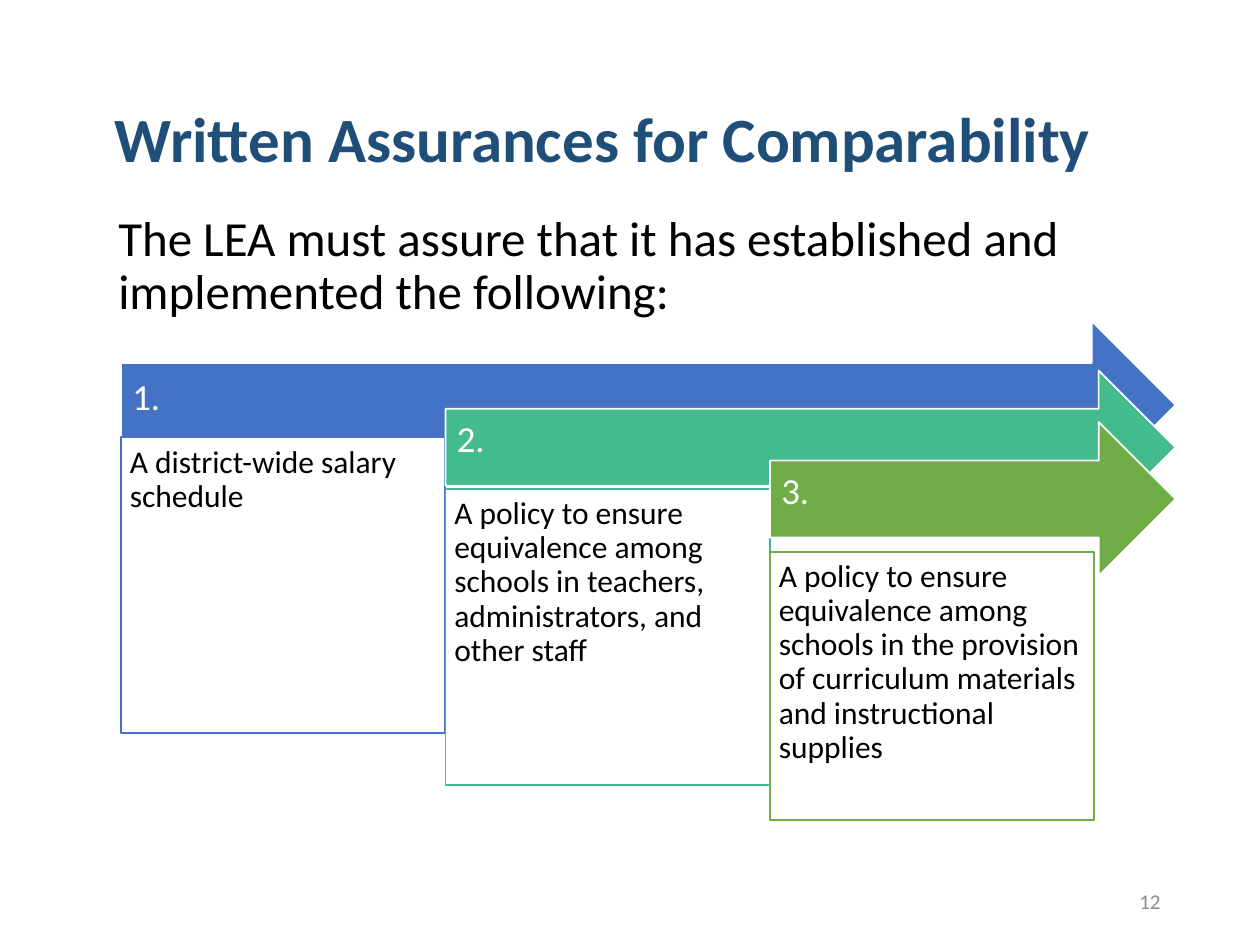
from dataclasses import dataclass

from pptx import Presentation
from pptx.dml.color import RGBColor
from pptx.enum.shapes import MSO_SHAPE
from pptx.enum.text import MSO_ANCHOR, MSO_AUTO_SIZE, PP_ALIGN
from pptx.util import Inches, Pt

ARROW, RECTANGLE = MSO_SHAPE.RIGHT_ARROW, MSO_SHAPE.RECTANGLE
TOP, MIDDLE = MSO_ANCHOR.TOP, MSO_ANCHOR.MIDDLE
LEFT, RIGHT = PP_ALIGN.LEFT, PP_ALIGN.RIGHT
NO_AUTOFIT = MSO_AUTO_SIZE.NONE
TITLE_ONLY = 5
SLIDE_WIDTH, SLIDE_HEIGHT = 10, 7.5
GRID_COLUMNS, GRID_ROWS = 100, 75


@dataclass(frozen=True)
class Theme:
    """Colours, font and type sizes of the slide."""
    font: str = "Calibri"
    title: str = "1F4E79"
    text: str = "000000"
    paper: str = "FFFFFF"
    muted: str = "8C8C8C"
    accents: tuple = ("4472C4", "43BB8D", "70AD47")
    title_size: int = 36
    intro_size: int = 28
    number_size: int = 21
    panel_size: int = 18
    footer_size: int = 12


@dataclass(frozen=True)
class Box:
    """A rectangle in grid columns and rows."""
    left: float
    top: float
    width: float
    height: float

    def emu(self):
        """Return the position and size in slide units."""
        column, row = SLIDE_WIDTH / GRID_COLUMNS, SLIDE_HEIGHT / GRID_ROWS
        return (Inches(self.left * column), Inches(self.top * row),
                Inches(self.width * column), Inches(self.height * row))


@dataclass(frozen=True)
class Step:
    """Wording of one step and its rows within the diagram."""
    text: str
    arrow_top: float
    arrow_height: float
    panel_top: float
    panel_height: float


THEME = Theme()
STEPS = (
    Step("A district-wide salary schedule", 0, 13.3, 9.2, 23.5),
    Step("A policy to ensure equivalence among schools in teachers, "
         "administrators, and other staff", 3.9, 12.2, 13.3, 23.5),
    Step("A policy to ensure equivalence among schools in the provision of "
         "curriculum materials and instructional supplies", 8, 12.2, 18.3, 21.3),
)


def write(shape, text, *, size, color, bold=False, align=LEFT, anchor=TOP,
          spacing=0.9, insets=(0.1, 0.05, 0.1, 0.05)):
    """Put one formatted paragraph into a shape."""
    frame = shape.text_frame
    frame.text = text
    frame.word_wrap = True
    frame.auto_size = NO_AUTOFIT
    frame.vertical_anchor = anchor
    (frame.margin_left, frame.margin_top,
     frame.margin_right, frame.margin_bottom) = map(Inches, insets)
    paragraph = frame.paragraphs[0]
    paragraph.alignment = align
    paragraph.line_spacing = spacing
    paragraph.space_before = Pt(0)
    font = paragraph.runs[0].font
    font.name, font.size, font.bold = THEME.font, Pt(size), bold
    font.color.rgb = RGBColor.from_string(color)


def add_block(slide, kind, box, fill, line):
    """Add a filled preset shape with a thin outline."""
    shape = slide.shapes.add_shape(kind, *box.emu())
    shape.shadow.inherit = False
    shape.fill.solid()
    shape.fill.fore_color.rgb = RGBColor.from_string(fill)
    shape.line.color.rgb = RGBColor.from_string(line)
    shape.line.width = Pt(1)
    return shape


def add_title(slide, box):
    """Place the title placeholder."""
    title = slide.shapes.title
    title.left, title.top, title.width, title.height = box.emu()
    write(title, "Written Assurances for Comparability", size=THEME.title_size,
          color=THEME.title, bold=True, anchor=MIDDLE)


def add_intro(slide, box):
    """Add the sentence that leads into the steps."""
    write(slide.shapes.add_textbox(*box.emu()),
          "The LEA must assure that it has established and implemented the following:",
          size=THEME.intro_size, color=THEME.text)


def add_step(slide, box, number, step, accent, panel_width):
    """Add a numbered arrow across the box and the panel below its start."""
    arrow = add_block(slide, ARROW,
                      Box(box.left, box.top + step.arrow_top, box.width, step.arrow_height),
                      accent, THEME.paper)
    write(arrow, f"{number}.", size=THEME.number_size, color=THEME.paper,
          anchor=MIDDLE, insets=(0.09, 0.09, 0.28, 0.19))
    panel = add_block(slide, RECTANGLE,
                      Box(box.left, box.top + step.panel_top, panel_width, step.panel_height),
                      THEME.paper, accent)
    write(panel, step.text, size=THEME.panel_size, color=THEME.text, insets=(0.07,) * 4)


def add_steps(slide, box):
    """Add the staggered arrows, each starting one panel further right."""
    panel_width = box.width * 4 / 13
    for index, (step, accent) in enumerate(zip(STEPS, THEME.accents)):
        offset = index * panel_width
        step_box = Box(box.left + offset, box.top, box.width - offset, box.height)
        add_step(slide, step_box, index + 1, step, accent, panel_width)


def add_page_number(slide, box):
    """Add the page number at the lower right."""
    write(slide.shapes.add_textbox(*box.emu()), "12", size=THEME.footer_size,
          color=THEME.muted, align=RIGHT, anchor=MIDDLE, spacing=1)


def main():
    """Build and save the slide."""
    presentation = Presentation()
    presentation.slide_width = Inches(SLIDE_WIDTH)
    presentation.slide_height = Inches(SLIDE_HEIGHT)
    slide = presentation.slides.add_slide(presentation.slide_layouts[TITLE_ONLY])
    add_title(slide, Box(8.1, 4, 86.2, 14.5))
    add_intro(slide, Box(8.4, 16.5, 88.2, 40.8))
    add_steps(slide, Box(9.6, 25.5, 83.7, 39.6))
    add_page_number(slide, Box(70.6, 69.5, 22.5, 4))
    presentation.save("out.pptx")


if __name__ == "__main__":
    main()
